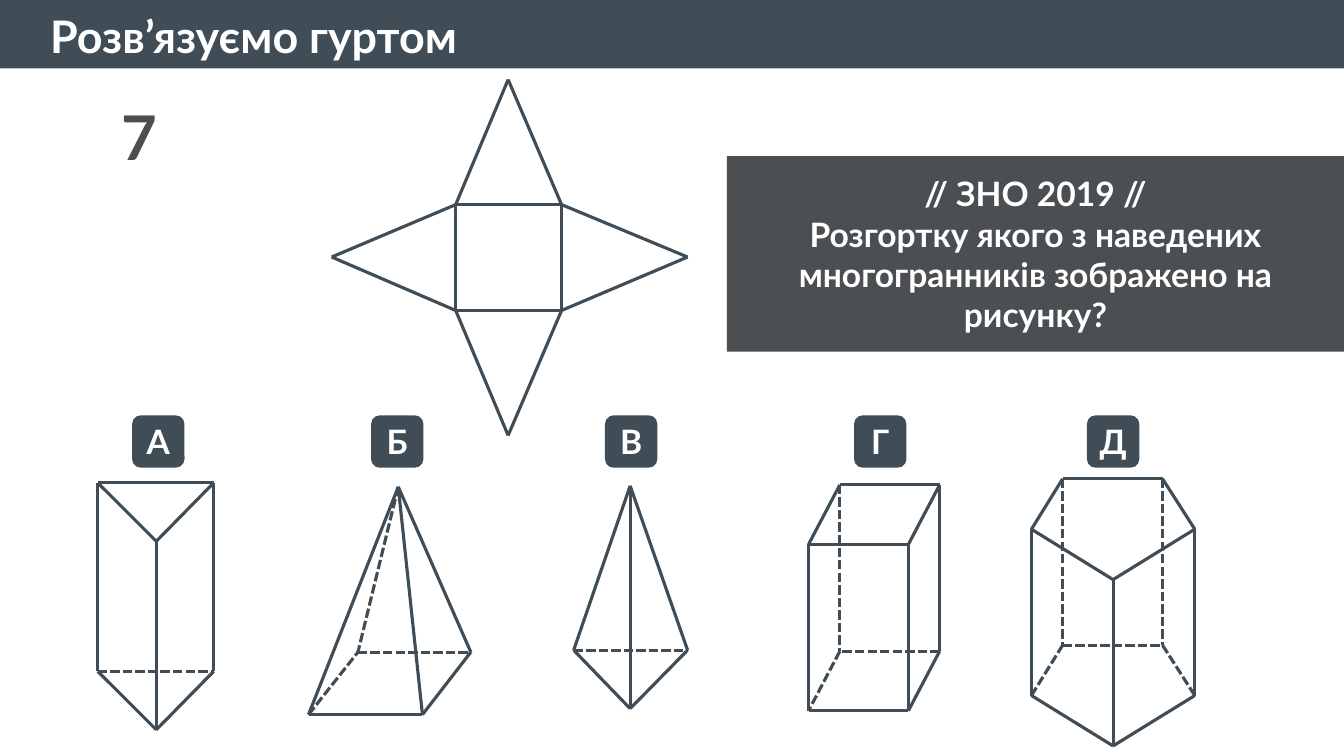
from pptx import Presentation
from pptx.dml.color import RGBColor
from pptx.enum.dml import MSO_LINE_DASH_STYLE as Dash
from pptx.enum.shapes import MSO_CONNECTOR as Connector, MSO_SHAPE as Shape
from pptx.enum.text import MSO_ANCHOR as Anchor, MSO_AUTO_SIZE as AutoSize, PP_ALIGN as Align
from pptx.oxml.ns import qn
from pptx.util import Inches, Pt

SLATE = "404D56"
GRAPHITE = "4B4F52"
WHITE = "FFFFFF"


def color(value):
    return RGBColor.from_string(value)


class Board:
    font = "Lato"
    line_width = Pt(2.25)

    def __init__(self, page):
        self.page = page

    def set_text(self, frame, text, size, ink, align):
        frame.word_wrap = True
        frame.text = text
        for para in frame.paragraphs:
            para.alignment = align
            for span in para.runs:
                span.font.name = self.font
                span.font.size = Pt(size)
                span.font.bold = True
                span.font.color.rgb = color(ink)

    def label(self, area, text, size, ink, align=Align.LEFT):
        box = self.page.shapes.add_textbox(*map(Inches, area))
        self.set_text(box.text_frame, text, size, ink, align)
        box.text_frame.auto_size = AutoSize.SHAPE_TO_FIT_TEXT

    def block(self, area, fill, text="", kind=Shape.RECTANGLE):
        box = self.page.shapes.add_shape(kind, *map(Inches, area))
        box.shadow.inherit = False
        box.fill.solid()
        box.fill.fore_color.rgb = color(fill)
        box.line.fill.background()
        if text:
            box.text_frame.vertical_anchor = Anchor.MIDDLE
            self.set_text(box.text_frame, text, 24, WHITE, Align.CENTER)

    def edge(self, group, start, end, dashed):
        line = group.shapes.add_connector(Connector.STRAIGHT, *map(Inches, start + end))
        line.line.color.rgb = color(SLATE)
        line.line.width = self.line_width
        if dashed:
            line.line.dash_style = Dash.SQUARE_DOT
        properties = line._element.spPr
        properties.append(properties.makeelement(qn("a:effectLst"), {}))

    def wireframe(self, points, visible, hidden=""):
        group = self.page.shapes.add_group_shape()
        for edges, dashed in ((visible, False), (hidden, True)):
            for start, end in edges.split():
                self.edge(group, points[start], points[end], dashed)


def prism(top, height):
    base = {name.lower(): (x, y + height) for name, (x, y) in top.items()}
    return {**top, **base}


NET = {
    "A": (4.52, 2.03), "B": (5.57, 2.03), "C": (5.57, 3.08), "D": (4.52, 3.08),
    "N": (5.04, 0.79), "E": (6.82, 2.55), "S": (5.04, 4.32), "W": (3.29, 2.55),
}
TRIANGULAR_PRISM = prism({"A": (0.97, 4.79), "B": (2.12, 4.79), "C": (1.55, 5.37)}, 1.87)
SQUARE_PYRAMID = {
    "T": (3.95, 4.83), "A": (3.06, 7.09), "B": (4.19, 7.09),
    "C": (4.67, 6.47), "D": (3.55, 6.47),
}
TRIANGULAR_PYRAMID = {
    "T": (6.25, 4.82), "A": (5.69, 6.45), "B": (6.82, 6.45), "C": (6.25, 7.03),
}
SQUARE_PRISM = prism(
    {"A": (8.02, 5.4), "B": (9.01, 5.4), "C": (9.32, 4.81), "D": (8.33, 4.81)}, 1.65)
PENTAGONAL_PRISM = prism(
    {"A": (10.54, 4.75), "B": (11.53, 4.75), "C": (11.85, 5.25),
     "D": (11.04, 5.75), "E": (10.23, 5.25)}, 1.65)

FIGURES = (
    (NET, "AB BC CD DA AN BN BE CE CS DS DW AW"),
    (TRIANGULAR_PRISM, "AB BC CA Aa Bb Cc bc ca", "ab"),
    (SQUARE_PYRAMID, "TA TB TC AB BC", "TD AD DC"),
    (TRIANGULAR_PYRAMID, "TA TB TC AC BC", "AB"),
    (SQUARE_PRISM, "AB BC CD DA Aa Bb Cc ab bc", "Dd cd da"),
    (PENTAGONAL_PRISM, "AB BC CD DE EA Cc Dd Ee cd de", "Aa Bb ab bc ea"),
)
ANSWERS = {"А": 1.31, "Б": 3.68, "В": 6, "Г": 8.47, "Д": 10.78}
QUESTION = "// ЗНО 2019 //\nРозгортку якого з наведених многогранників зображено на рисунку?"


def main():
    deck = Presentation()
    deck.slide_width = Inches(13.33)
    deck.slide_height = Inches(7.5)
    board = Board(deck.slides.add_slide(deck.slide_layouts[6]))

    board.block((0, 0, 13.33, 0.68), SLATE)
    board.label((0.4, 0.04, 12.64, 0.64), "Розв’язуємо гуртом", 32, WHITE)
    board.label((0.87, 0.93, 1.03, 0.84), "7", 44, GRAPHITE, Align.CENTER)
    board.block((7.21, 1.55, 6.12, 1.94), GRAPHITE, QUESTION)
    for figure in FIGURES:
        board.wireframe(*figure)
    for letter, left in ANSWERS.items():
        board.block((left, 4.12, 0.52, 0.52), SLATE, letter, Shape.ROUNDED_RECTANGLE)

    deck.save("out.pptx")


if __name__ == "__main__":
    main()
